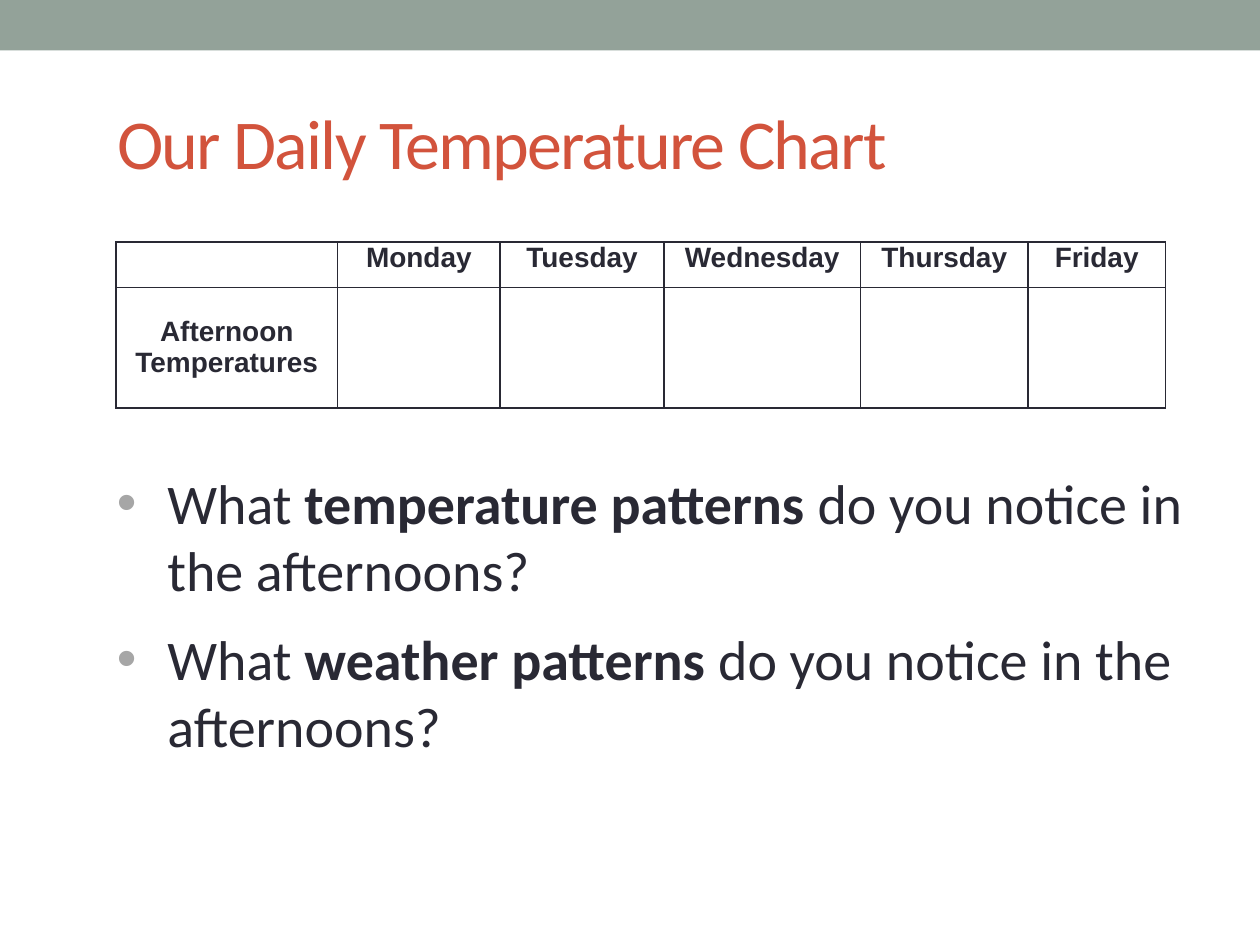
from dataclasses import dataclass

from lxml.etree import SubElement
from pptx import Presentation
from pptx.dml.color import RGBColor
from pptx.enum.shapes import MSO_SHAPE
from pptx.enum.text import MSO_ANCHOR, PP_ALIGN
from pptx.oxml.ns import qn
from pptx.util import Inches, Pt


@dataclass(frozen=True)
class Theme:
    band: str = "93A299"
    title: str = "D2533C"
    text: str = "292934"
    bullet: str = "A6A6A6"
    body_font: str = "Calibri"
    table_font: str = "Arial"
    title_size: int = 40
    body_size: int = 32
    table_size: int = 16
    border_width: int = 1


THEME = Theme()
DAYS = ["Monday", "Tuesday", "Wednesday", "Thursday", "Friday"]
TABLE_ROWS = [["", *DAYS], ["Afternoon Temperatures"] + [""] * len(DAYS)]
COLUMN_WIDTHS = [1.76, 1.29, 1.3, 1.56, 1.33, 1.09]
ROW_HEIGHTS = [0.36, 0.96]
QUESTIONS = [
    ("What ", "temperature patterns ", "do you notice in the afternoons?"),
    ("What ", "weather patterns ", "do you notice in the afternoons?"),
]


def inches(box):
    return [Inches(length) for length in box]


def format_font(font, name, size, color, bold=False):
    font.name = name
    font.size = Pt(size)
    font.bold = bold
    font.color.rgb = RGBColor.from_string(color)


def add_band(slide, box):
    band = slide.shapes.add_shape(MSO_SHAPE.RECTANGLE, *inches(box))
    band.shadow.inherit = False
    band.fill.solid()
    band.fill.fore_color.rgb = RGBColor.from_string(THEME.band)
    band.line.fill.background()


def place_title(slide, box, text):
    title = slide.shapes.title
    title.left, title.top, title.width, title.height = inches(box)
    frame = title.text_frame
    frame.text = text
    frame.word_wrap = True
    frame.vertical_anchor = MSO_ANCHOR.MIDDLE
    paragraph = frame.paragraphs[0]
    paragraph.alignment = PP_ALIGN.LEFT
    run = paragraph.runs[0]
    format_font(run.font, THEME.body_font, THEME.title_size, THEME.title)
    run.font._element.set("spc", "-100")


def add_borders(cell):
    properties = cell._tc.get_or_add_tcPr()
    for side in ("a:lnL", "a:lnR", "a:lnT", "a:lnB"):
        line = SubElement(properties, qn(side), w=str(Pt(THEME.border_width)))
        fill = SubElement(line, qn("a:solidFill"))
        SubElement(fill, qn("a:srgbClr"), val=THEME.text)


def format_cell(cell, text, anchor):
    cell.margin_left = cell.margin_right = Inches(0.07)
    cell.margin_top = cell.margin_bottom = 0
    cell.vertical_anchor = anchor
    add_borders(cell)
    cell.fill.background()
    cell.text_frame.text = text
    paragraph = cell.text_frame.paragraphs[0]
    paragraph.alignment = PP_ALIGN.CENTER
    for item in (paragraph, *paragraph.runs):
        format_font(item.font, THEME.table_font, THEME.table_size, THEME.text, True)


def add_temperature_table(slide, box):
    shape = slide.shapes.add_table(len(TABLE_ROWS), len(COLUMN_WIDTHS), *inches(box))
    table = shape.table
    table.first_row = table.horz_banding = False
    for column, width in zip(table.columns, COLUMN_WIDTHS):
        column.width = Inches(width)
    for row, height, texts, anchor in zip(
        table.rows, ROW_HEIGHTS, TABLE_ROWS, (MSO_ANCHOR.TOP, MSO_ANCHOR.MIDDLE)
    ):
        row.height = Inches(height)
        for cell, text in zip(row.cells, texts):
            format_cell(cell, text, anchor)


def add_bullet(paragraph):
    properties = paragraph._p.get_or_add_pPr()
    properties.set("marL", str(Inches(0.4)))
    properties.set("indent", str(Inches(-0.4)))
    color = SubElement(properties, qn("a:buClr"))
    SubElement(color, qn("a:srgbClr"), val=THEME.bullet)
    SubElement(properties, qn("a:buFont"), typeface="Arial")
    SubElement(properties, qn("a:buChar"), char="•")


def add_questions(slide, box):
    frame = slide.shapes.add_textbox(*inches(box)).text_frame
    frame.word_wrap = True
    for index, parts in enumerate(QUESTIONS):
        paragraph = frame.add_paragraph() if index else frame.paragraphs[0]
        paragraph.space_before = Pt(12)
        add_bullet(paragraph)
        for text, bold in zip(parts, (False, True, False)):
            run = paragraph.add_run()
            run.text = text
            format_font(run.font, THEME.body_font, THEME.body_size, THEME.text, bold)


def main():
    presentation = Presentation()
    presentation.slide_width = Inches(10)
    presentation.slide_height = Inches(7.5)
    slide = presentation.slides.add_slide(presentation.slide_layouts[5])
    add_band(slide, (0, 0, 10, 0.4))
    place_title(slide, (0.83, 0.58, 8.67, 1.08), "Our Daily Temperature Chart")
    add_temperature_table(slide, (0.92, 1.92, 8.33, 1.32))
    add_questions(slide, (0.83, 3.67, 9, 2.42))
    presentation.save("out.pptx")


if __name__ == "__main__":
    main()
